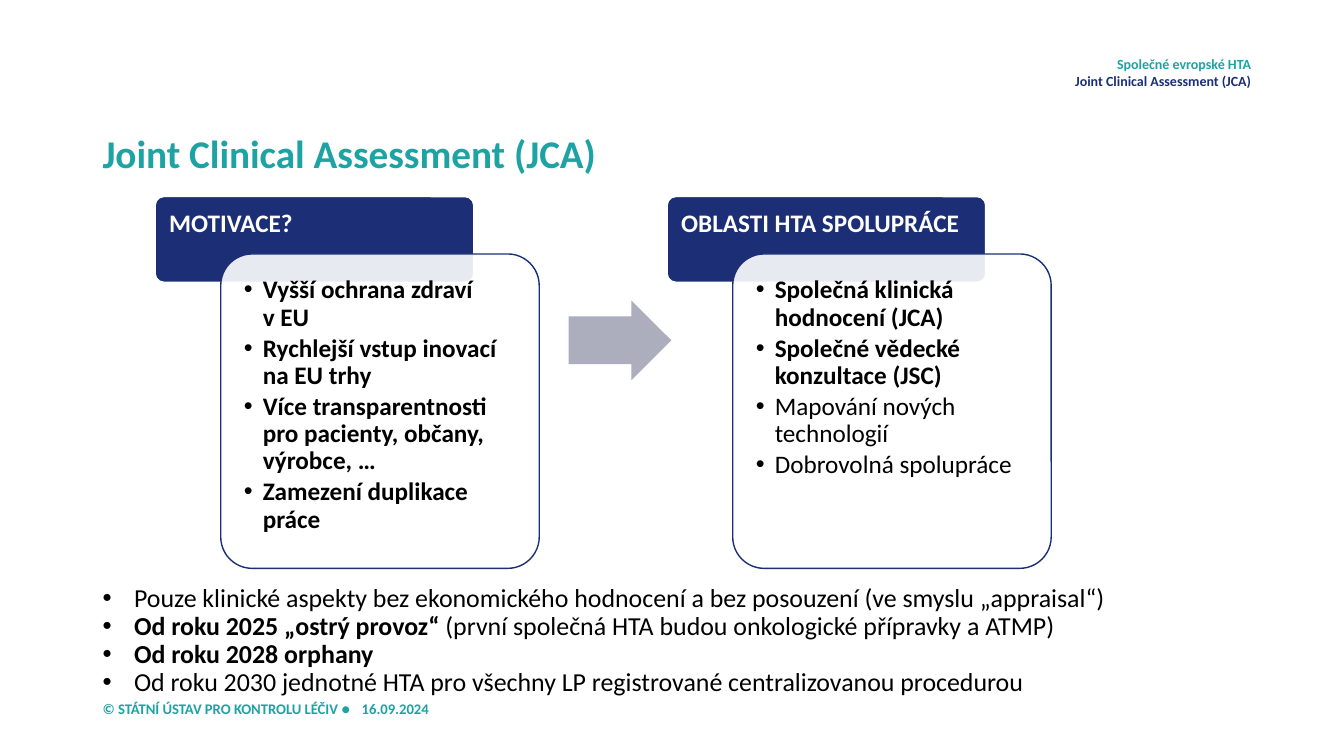
import pptx
import pptx.util
import pptx.dml.color
import pptx.enum.shapes
import pptx.enum.text
import pptx.oxml
import pptx.oxml.ns
import lxml.etree

Pt = pptx.util.Pt
Kind = pptx.enum.shapes.MSO_SHAPE
Align = pptx.enum.text.PP_ALIGN
Anchor = pptx.enum.text.MSO_ANCHOR


def color(code):
    return pptx.dml.color.RGBColor.from_string(code)


def tag(parent, name, **attrs):
    """Append a DrawingML element to parent."""
    full = pptx.oxml.ns.qn("a:" + name)
    return lxml.etree.SubElement(parent, full, **attrs)


def write(frame, text, size=18, ink="000000", align=Align.LEFT, anchor=Anchor.TOP,
          pad=(0, 0, 0, 0), ratio=1.0, after=0, hang=0):
    """Fill a frame, one paragraph per item; words between ** are bold."""
    frame.word_wrap = True
    frame.vertical_anchor = anchor
    (frame.margin_left, frame.margin_top,
     frame.margin_right, frame.margin_bottom) = map(Pt, pad)
    for i, item in enumerate(text):
        para = frame.add_paragraph() if i else frame.paragraphs[0]
        if hang:
            props = para._p.get_or_add_pPr()
            props.set("marL", str(Pt(hang)))
            props.set("indent", str(-Pt(hang)))
            tag(props, "buFont", typeface="Arial")
            tag(props, "buChar", char="•")
        para.alignment = align
        para.line_spacing = ratio
        para.space_before = Pt(0)
        para.space_after = Pt(after)
        for j, part in enumerate(item.split("**")):
            for k, line in enumerate(part.split("\n")):
                if k:
                    para.add_line_break()
                if line:
                    run = para.add_run()
                    run.text = line
                    run.font.name = Deck.face
                    run.font.size = Pt(size)
                    run.font.bold = j % 2 == 1
                    run.font.color.rgb = color(ink)


class Deck:
    face = "Calibri"
    teal = "1EA3A4"
    navy = "1C2F76"
    gray = "ACADBD"
    white = "FFFFFF"

    def __init__(self):
        self.file = pptx.Presentation()
        self.file.slide_width = Pt(960)
        self.file.slide_height = Pt(540)
        self.slide = self.file.slides.add_slide(self.file.slide_layouts[6])

    def label(self, box, *text, **form):
        shape = self.slide.shapes.add_textbox(*map(Pt, box))
        write(shape.text_frame, text, **form)

    def shape(self, kind, box, fill, line=None, adj=(), alpha=None):
        shape = self.slide.shapes.add_shape(kind, *map(Pt, box))
        shape.shadow.inherit = False
        for i, value in enumerate(adj):
            shape.adjustments[i] = value
        shape.fill.solid()
        shape.fill.fore_color.rgb = color(fill)
        if alpha:
            tint = shape._element.spPr.find(".//" + pptx.oxml.ns.qn("a:srgbClr"))
            tag(tint, "alpha", val=str(alpha * 1000))
        if line:
            shape.line.color.rgb = color(line)
            shape.line.width = Pt(1)
        else:
            shape.line.fill.background()
        return shape

    def panel(self, left, head, items):
        """Draw a header tab with a bulleted card overlapping it."""
        tab = self.shape(Kind.ROUNDED_RECTANGLE, (left, 140.4, 227.5, 61.2),
                         self.navy, self.white, [0.1])
        write(tab.text_frame, [head], ink=self.white, pad=(8.2, 8.2, 8.2, 5),
              ratio=0.9)
        card = self.shape(Kind.ROUNDED_RECTANGLE, (left + 46.8, 181.4, 227.5, 224.6),
                          self.white, self.navy, [0.1], alpha=90)
        write(card.text_frame, items, pad=(10, 10, 10, 10), ratio=0.9,
              after=2.7, hang=13.5)


def main():
    deck = Deck()
    inset = (7.2, 3.6, 7.2, 3.6)
    foot = dict(size=10.5, ink=deck.teal, anchor=Anchor.MIDDLE, pad=inset)
    deck.label((66.2, 496.1, 198.7, 20.2),
               "**© STÁTNÍ ÚSTAV PRO KONTROLU LÉČIV ●**", **foot)
    deck.label((251.3, 496.1, 82.8, 20.2), "**16.09.2024**", **foot)
    deck.label((493.9, 39.6, 399.6, 11.5), "**Společné evropské HTA**",
               size=10, ink=deck.teal, align=Align.RIGHT)
    deck.label((493.9, 51.8, 399.6, 13.7), "**Joint Clinical Assessment (JCA)**",
               size=10, ink=deck.navy, align=Align.RIGHT)
    deck.label((66.2, 89.3, 828, 43.9), "**Joint Clinical Assessment (JCA)**",
               size=28, ink=deck.teal, anchor=Anchor.MIDDLE, pad=inset, ratio=0.9)

    deck.panel(110.9, "**MOTIVACE?**", [
        "**Vyšší ochrana zdraví \nv EU**",
        "**Rychlejší vstup inovací na EU trhy**",
        "**Více transparentnosti pro pacienty, občany, výrobce, …**",
        "**Zamezení duplikace práce**"])
    deck.shape(Kind.RIGHT_ARROW, (406.1, 214.6, 73.4, 56.9), deck.gray, adj=[0.6, 0.5])
    deck.panel(476.6, "**OBLASTI HTA SPOLUPRÁCE**", [
        "**Společná klinická hodnocení (JCA)**",
        "**Společné vědecké konzultace (JSC)**",
        "Mapování nových technologií",
        "Dobrovolná spolupráce"])

    deck.label((66.2, 414.5, 828, 88),
               "Pouze klinické aspekty bez ekonomického hodnocení a bez posouzení "
               "(ve smyslu „appraisal“)",
               "**Od roku 2025 „ostrý provoz“ **(první společná HTA budou "
               "onkologické přípravky a ATMP)",
               "**Od roku 2028 orphany**",
               "Od roku 2030 jednotné HTA pro všechny LP registrované "
               "centralizovanou procedurou",
               size=18.5, pad=inset, ratio=0.9, hang=22.5)
    deck.file.save("out.pptx")


if __name__ == "__main__":
    main()
